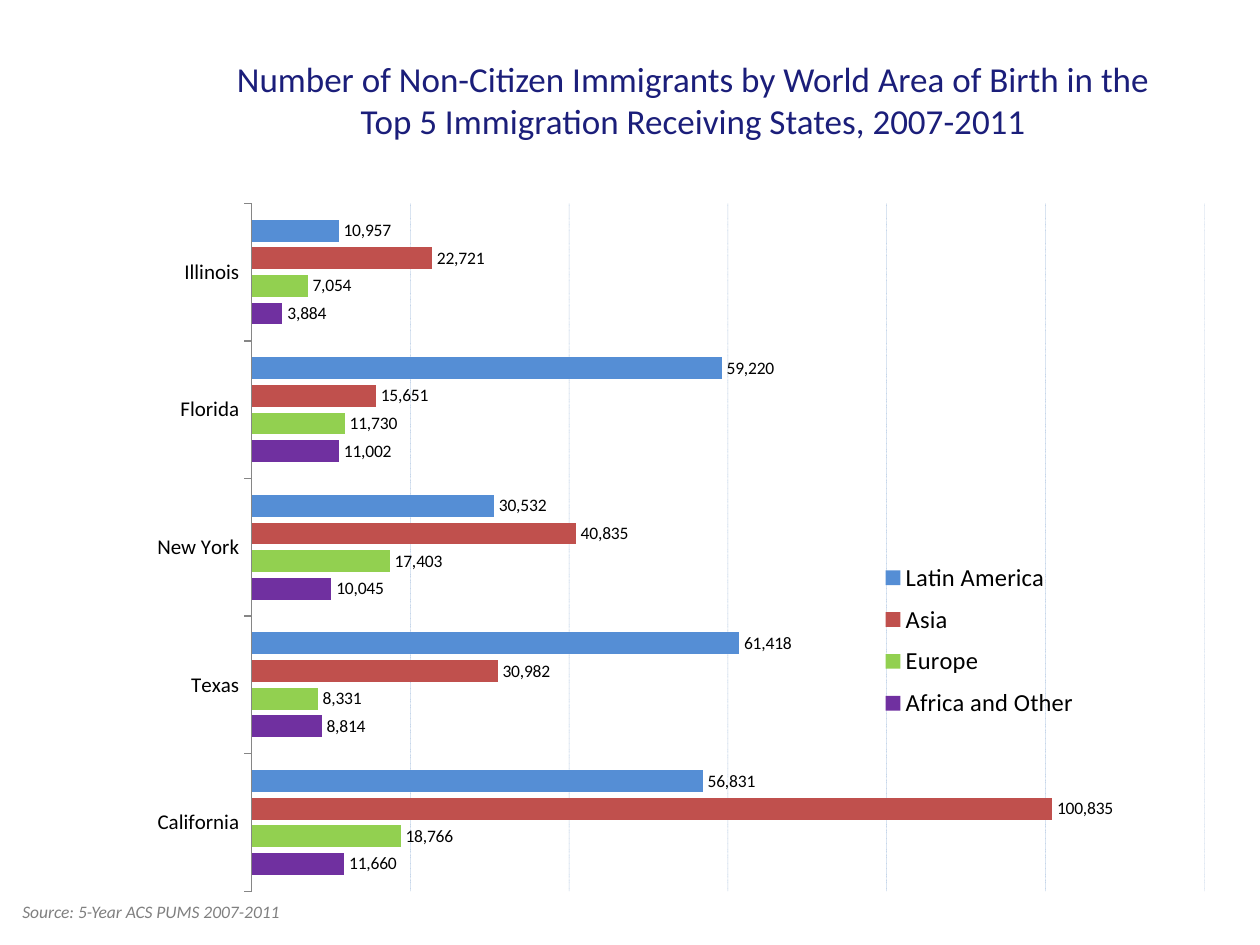
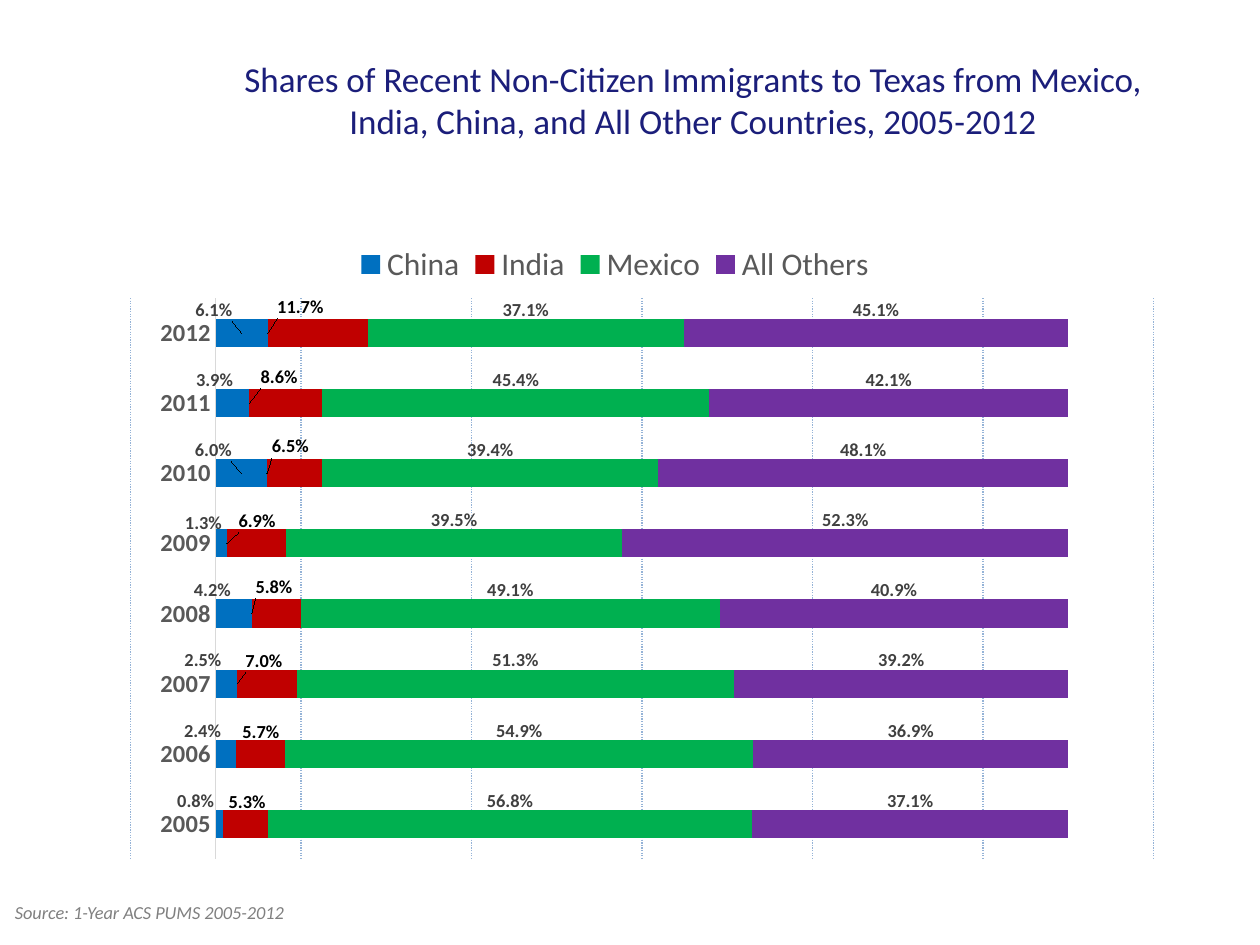
from lxml.etree import SubElement
from pptx import Presentation
from pptx.chart.data import CategoryChartData
from pptx.dml.color import RGBColor
from pptx.enum.chart import XL_CHART_TYPE, XL_LABEL_POSITION, XL_LEGEND_POSITION, XL_TICK_MARK
from pptx.enum.dml import MSO_LINE
from pptx.enum.text import MSO_ANCHOR, MSO_AUTO_SIZE, PP_ALIGN
from pptx.oxml import parse_xml
from pptx.oxml.ns import nsdecls, qn
from pptx.util import Cm, Pt

COLORS = {
    "background": "FFFFFF", "title": "1B1E7A", "source": "808080",
    "black": "000000", "dark grey": "404040", "grey": "595959",
    "axis": "868686", "light axis": "D9D9D9", "grid": "4F81BD", "light grid": "95B3D7",
    "Africa and Other": "7030A0", "Europe": "92D050", "Asia": "C0504D", "Latin America": "558ED5",
    "China": "0070C0", "India": "C00000", "Mexico": "00B050", "All Others": "7030A0",
}
FONT_NAME = "Calibri"

STATES = ["California", "Texas", "New York", "Florida", "Illinois"]
IMMIGRANTS_BY_AREA = {
    "Africa and Other": [11660, 8814, 10045, 11002, 3884],
    "Europe": [18766, 8331, 17403, 11730, 7054],
    "Asia": [100835, 30982, 40835, 15651, 22721],
    "Latin America": [56831, 61418, 30532, 59220, 10957],
}
YEARS = [str(year) for year in range(2005, 2013)]
TEXAS_SHARES = {
    "China": [0.008, 0.024, 0.025, 0.042, 0.013, 0.060, 0.039, 0.061],
    "India": [0.053, 0.057, 0.070, 0.058, 0.069, 0.065, 0.086, 0.117],
    "Mexico": [0.568, 0.549, 0.513, 0.491, 0.395, 0.394, 0.454, 0.371],
    "All Others": [0.371, 0.369, 0.392, 0.409, 0.523, 0.481, 0.421, 0.451],
}
# Label shifts from their default places, in percent of the chart's width and height
LABEL_SHIFTS = {
    "China": ([-2.1, -2.1, -2.1, -1.9, -1.6, -2.5, -1.6, -2.5],
              [-3.5, -3.5, -3.5, -3.5, -3.1, -3.5, -3.5, -3.5]),
    "India": ([0.1, 0.1, 0.3, -0.1, 0.6, 0, 0.6, 0.4],
              [-3.3, -3.3, -3.4, -4, -3.4, -4.1, -4, -4]),
    "Mexico": ([0] * 8, [-3.5] * 8),
    "All Others": ([0] * 8, [-3.5] * 8),
}


def set_attributes(target, values):
    for name, value in values.items():
        setattr(target, name, value)


def set_font(font, size, color, **values):
    set_attributes(font, {"name": FONT_NAME, "size": Pt(size), **values})
    font.color.rgb = RGBColor.from_string(COLORS[color])


def set_line(line, color, width, dash=None, alpha=None):
    line.color.rgb = RGBColor.from_string(COLORS[color])
    line.width = Pt(width)
    if dash:
        line.dash_style = dash
    if alpha:
        for color_element in line._get_or_add_ln().iter(qn("a:srgbClr")):
            SubElement(color_element, qn("a:alpha"), val=str(alpha * 1000))


def set_layout(parent, index, **values):
    """Give a chart part a manual layout, as fractions of the chart."""
    for layout in parent.findall(qn("c:layout")):
        parent.remove(layout)
    entries = "".join(f'<c:{name} val="{value}"/>' for name, value in values.items())
    parent.insert(index, parse_xml(
        f'<c:layout {nsdecls("c")}><c:manualLayout>{entries}</c:manualLayout></c:layout>'))


def set_frame(parent, index, left, top, width, height, **target):
    set_layout(parent, index, **target, xMode="edge", yMode="edge",
               x=left, y=top, w=width, h=height)


class Deck:
    def __init__(self):
        self.presentation = Presentation()
        set_attributes(self.presentation, {"slide_width": Cm(25.4), "slide_height": Cm(19.05)})
        self.slide = None

    def add_slide(self, title):
        self.slide = self.presentation.slides.add_slide(self.presentation.slide_layouts[5])
        background = self.slide.background.fill
        background.solid()
        background.fore_color.rgb = RGBColor.from_string(COLORS["background"])
        shape = self.slide.shapes.title
        set_attributes(shape, {"left": Cm(4.45), "top": Cm(0.64),
                               "width": Cm(19.05), "height": Cm(2.74)})
        set_attributes(shape.text_frame, {"text": title, "word_wrap": True,
                                          "auto_size": MSO_AUTO_SIZE.NONE,
                                          "vertical_anchor": MSO_ANCHOR.MIDDLE})
        paragraph = shape.text_frame.paragraphs[0]
        paragraph.alignment = PP_ALIGN.CENTER
        set_font(paragraph.runs[0].font, 20, "title")

    def add_source(self, text, left, size):
        box = self.slide.shapes.add_textbox(Cm(left), Cm(17.98), Cm(6.55), Cm(0.72))
        set_attributes(box.text_frame, {"text": text, "word_wrap": True,
                                        "auto_size": MSO_AUTO_SIZE.SHAPE_TO_FIT_TEXT})
        paragraph = box.text_frame.paragraphs[0]
        set_attributes(paragraph, {"line_spacing": 1.15, "space_after": Pt(10)})
        set_font(paragraph.runs[0].font, size, "source", italic=True)

    def add_bar_chart(self, chart_type, frame, categories, series_values, number_format,
                      overlap, plot_frame):
        data = CategoryChartData(number_format=number_format)
        data.categories = categories
        for name, values in series_values.items():
            data.add_series(name, values)
        chart = self.slide.shapes.add_chart(chart_type, *map(Cm, frame), data).chart
        chart.has_title = False
        set_font(chart.font, 10, "black")
        plot = chart.plots[0]
        set_attributes(plot, {"gap_width": 150, "overlap": overlap, "vary_by_categories": False})
        for series in plot.series:
            series.format.fill.solid()
            series.format.fill.fore_color.rgb = RGBColor.from_string(COLORS[series.name])
        chart.value_axis.visible = False
        set_frame(chart._chartSpace.chart.plotArea, 0, *plot_frame, layoutTarget="inner")
        return chart

    def format_axes(self, chart, limits, tick_mark, axis_color, grid, **font):
        category_axis, value_axis = chart.category_axis, chart.value_axis
        set_attributes(category_axis, {"major_tick_mark": tick_mark,
                                       "minor_tick_mark": XL_TICK_MARK.NONE})
        set_line(category_axis.format.line, axis_color, 0.75)
        set_font(category_axis.tick_labels.font, **font)
        set_attributes(value_axis, {"has_major_gridlines": True, **limits})
        set_line(value_axis.major_gridlines.format.line, dash=MSO_LINE.ROUND_DOT, **grid)

    def add_legend(self, chart, position, overlay, frame, size, color):
        chart.has_legend = True
        set_attributes(chart.legend, {"position": position, "include_in_layout": overlay})
        set_font(chart.legend.font, size, color)
        set_frame(chart.legend._element, 1, *frame)

    def add_value_labels(self, series, number_format, size, color, **font):
        labels = series.data_labels
        set_attributes(labels, {"show_value": True, "number_format": number_format,
                                "number_format_is_linked": False})
        set_font(labels.font, size, color, **font)

    def shift_labels(self, series, shifts, color, position):
        for index, (across, down) in enumerate(zip(*shifts)):
            label = series.points[index].data_label
            set_font(label.font, 10.5, color, bold=True)
            label.position = position
            set_layout(label._dLbl, 1, x=round(across / 100, 3), y=round(down / 100, 3))


def add_states_slide(deck):
    deck.add_slide("Number of Non-Citizen Immigrants by World Area of Birth in the "
                   "Top 5 Immigration Receiving States, 2007-2011")
    chart = deck.add_bar_chart(
        XL_CHART_TYPE.BAR_CLUSTERED, (2.74, 3.81, 22, 14.45), STATES, IMMIGRANTS_BY_AREA,
        "#,##0", -26, (0.106, 0.02, 0.873, 0.96))
    deck.format_axes(
        chart, {"minimum_scale": 0, "maximum_scale": 120000, "major_unit": 20000},
        XL_TICK_MARK.OUTSIDE, "axis", {"color": "grid", "width": 0.25, "alpha": 50},
        size=12, color="black")
    deck.add_legend(chart, XL_LEGEND_POSITION.RIGHT, True, (0.673, 0.505, 0.2, 0.25), 14, "black")
    for series in chart.plots[0].series:
        deck.add_value_labels(series, "#,##0", 10, "black")
    deck.add_source("Source: 5-Year ACS PUMS 2007-2011", 0.2, 10)


def add_texas_slide(deck):
    deck.add_slide("Shares of Recent Non-Citizen Immigrants to Texas from Mexico, "
                   "India, China, and All Other Countries, 2005-2012")
    chart = deck.add_bar_chart(
        XL_CHART_TYPE.BAR_STACKED_100, (1.07, 4.55, 22.66, 13.03), YEARS, TEXAS_SHARES,
        "0.0%", 100, (0.069, 0.112, 0.91, 0.868))
    deck.format_axes(
        chart, {"minimum_scale": -0.1, "maximum_scale": 1.1, "major_unit": 0.2},
        XL_TICK_MARK.NONE, "light axis", {"color": "light grid", "width": 0.75},
        size=14, color="grey", bold=True)
    deck.add_legend(chart, XL_LEGEND_POSITION.TOP, False, (0.26, 0.02, 0.48, 0.08), 18, "grey")
    for series in chart.plots[0].series:
        is_india = series.name == "India"
        color = "black" if is_india else "dark grey"
        position = XL_LABEL_POSITION.INSIDE_BASE if is_india else XL_LABEL_POSITION.CENTER
        deck.add_value_labels(series, "0.0%", 10.5, color, bold=True)
        deck.shift_labels(series, LABEL_SHIFTS[series.name], color, position)
    deck.add_source("Source: 1-Year ACS PUMS 2005-2012", 0.05, 10.5)


def main():
    deck = Deck()
    add_states_slide(deck)
    add_texas_slide(deck)
    deck.presentation.save("out.pptx")


if __name__ == "__main__":
    main()
